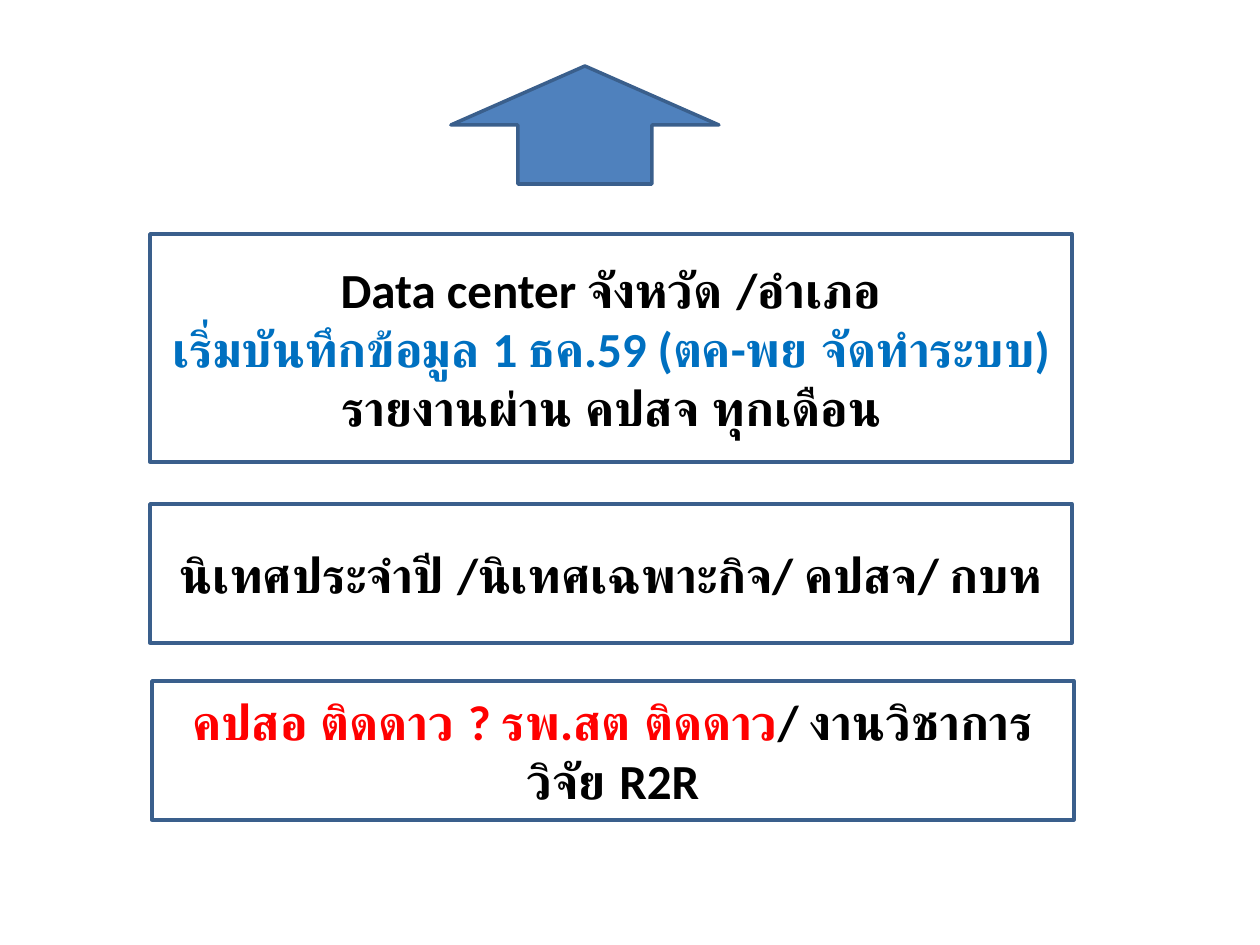
from pptx import Presentation
from pptx import util as u
from pptx.dml.color import RGBColor
from pptx.enum import shapes, text

PX = u.Inches(1) // 126
COLORS = {"line": "3A5F8C", "arrow": "4F81BD", "black": "000000",
          "blue": "0070C0", "red": "FF0000"}


def rgb(name):
    return RGBColor.from_string(COLORS[name])


def add_shape(s, kind, box, fill=None):
    """Outlined preset shape, hollow unless a fill is named."""
    sp = s.shapes.add_shape(kind, *(v * PX for v in box))
    sp.shadow.inherit = False
    if fill:
        sp.fill.solid()
        sp.fill.fore_color.rgb = rgb(fill)
    else:
        sp.fill.background()
    sp.line.color.rgb = rgb("line")
    sp.line.width = u.Pt(2)
    return sp


def add_run(p, content, color="black", size=28, bold=True, font="Calibri"):
    r = p.add_run()
    r.text = content
    r.font.name, r.font.size, r.font.bold = font, u.Pt(size), bold
    r.font.color.rgb = rgb(color)


def add_text_box(s, box, lines):
    """Framed box; each line is a list of (text, colour) runs."""
    sp = add_shape(s, shapes.MSO_SHAPE.RECTANGLE, box)
    tf = sp.text_frame
    tf.word_wrap = True
    tf.vertical_anchor = text.MSO_ANCHOR.MIDDLE
    for i, runs in enumerate(lines):
        p = tf.add_paragraph() if i else tf.paragraphs[0]
        p.alignment = text.PP_ALIGN.CENTER
        for content, color in runs:
            add_run(p, content, color=color)


def main():
    prs = Presentation()
    prs.slide_width, prs.slide_height = 1260 * PX, 945 * PX
    s = prs.slides.add_slide(prs.slide_layouts[6])

    # Data center and reporting
    add_text_box(s, (150, 234, 922, 228), [
        [("Data center จังหวัด /อำเภอ", "black")],
        [("เริ่มบันทึกข้อมูล 1 ธค.59 (ตค-พย จัดทำระบบ)", "blue")],
        [("รายงานผ่าน คปสจ ทุกเดือน", "black")],
    ])
    # Supervision
    add_text_box(s, (150, 504, 922, 139), [
        [("นิเทศประจำปี /นิเทศเฉพาะกิจ/ คปสจ/ กบห", "black")],
    ])
    # Star-rated units and research
    add_text_box(s, (152, 681, 922, 139), [
        [("คปสอ ติดดาว ? รพ.สต ติดดาว", "red"),
         ("/ งานวิชาการ วิจัย R2R", "black")],
    ])
    # Arrow towards the goal
    add_shape(s, shapes.MSO_SHAPE.UP_ARROW, (451, 66, 268, 118), fill="arrow")

    prs.save("out.pptx")


if __name__ == "__main__":
    main()
